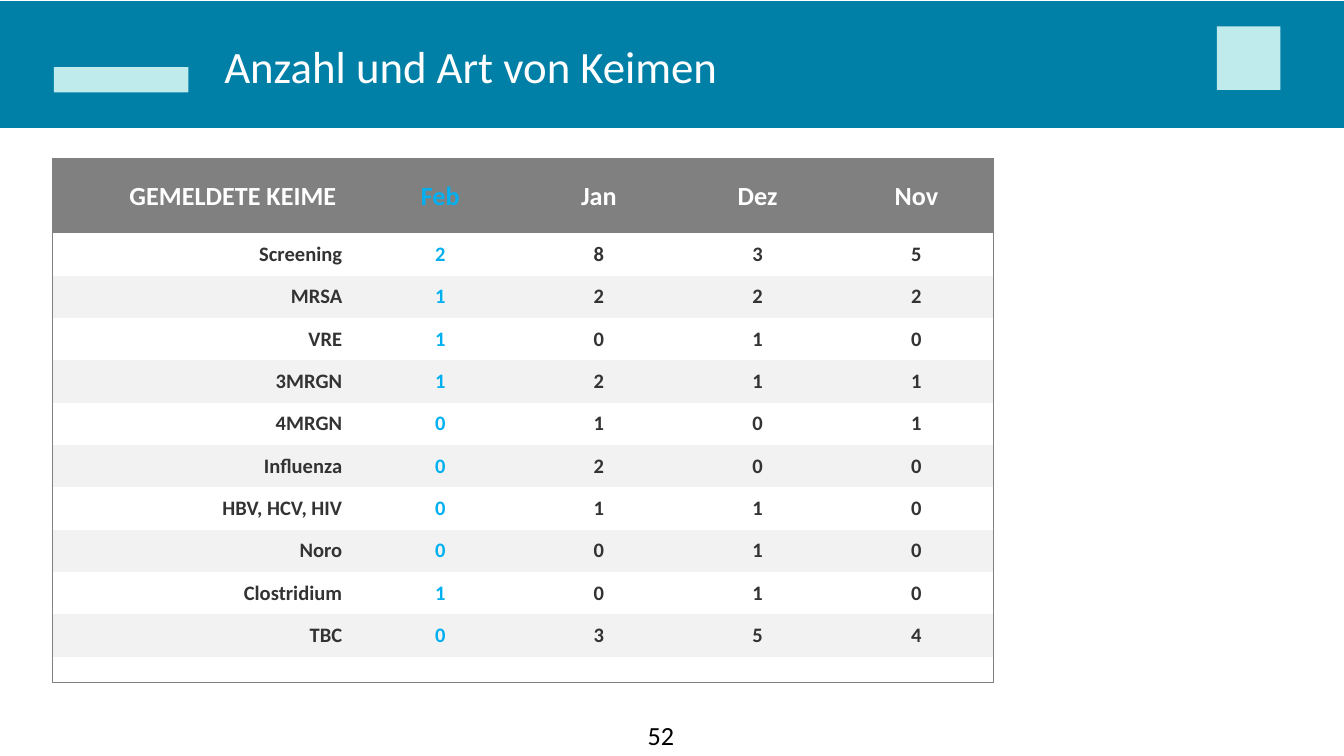
from lxml.etree import SubElement as Sub
from pptx import Presentation
from pptx.dml.color import RGBColor as Rgb
from pptx.enum.shapes import MSO_SHAPE as Form
from pptx.enum.text import MSO_ANCHOR as Anchor, MSO_AUTO_SIZE as Fit, PP_ALIGN as Align
from pptx.oxml.ns import qn
from pptx.util import Cm, Pt

# Content
HEAD = ["GEMELDETE KEIME", "Feb", "Jan", "Dez", "Nov"]
GERMS = [
    ("Screening", 2, 8, 3, 5),
    ("MRSA", 1, 2, 2, 2),
    ("VRE", 1, 0, 1, 0),
    ("3MRGN", 1, 2, 1, 1),
    ("4MRGN", 0, 1, 0, 1),
    ("Influenza", 0, 2, 0, 0),
    ("HBV, HCV, HIV", 0, 1, 1, 0),
    ("Noro", 0, 0, 1, 0),
    ("Clostridium", 1, 0, 1, 0),
    ("TBC", 0, 3, 5, 4),
]

# Theme
THEME = {
    "font": "Calibri", "band": "0080A7", "mint": "BFEBED", "white": "FFFFFF",
    "gray": "808080", "stripe": "F2F2F2", "ink": "333333", "now": "00B0F0",
    "black": "000000", "title": 24, "head": 14, "body": 11, "page": 14,
}

# Text boxes: text, place in cm, size, colour, frame values
FREE = {"word_wrap": False, "auto_size": Fit.SHAPE_TO_FIT_TEXT}
FLAT = {"word_wrap": True, "vertical_anchor": Anchor.MIDDLE, "margin_left": 0,
        "margin_right": 0, "margin_top": 0, "margin_bottom": 0}
TEXTS = [
    ("52", (11.99, 13.48, 1.42, 0.86), "page", "black", FREE),
    ("Anzahl und Art von Keimen", (4.24, 0.84, 18.42, 0.81), "title", "white", FLAT),
]

# Plain blocks: place in cm, colour
BLOCKS = [
    ((0, 0.02, 25.4, 2.4), "band"),
    ((1.02, 1.27, 2.54, 0.48), "mint"),
    ((23, 0.5, 1.2, 1.2), "mint"),
]

# Table geometry in cm
SPOT = (1, 3)
WIDTHS = [5.77] + [3] * 4
HEIGHTS = [1.41] + [0.8] * len(GERMS) + [0.49]


def tint(name):
    return Rgb.from_string(THEME[name])


def apply(item, vals):
    for key, val in vals.items():
        setattr(item, key, val)


def write(para, text, size, color, bold=False):
    run = para.add_run()
    run.text = text
    apply(run.font, {"name": THEME["font"], "size": Pt(THEME[size]), "bold": bold})
    run.font.color.rgb = tint(color)


def frame(cell, sides):
    props = cell._tc.get_or_add_tcPr()
    for i, side in enumerate("LRTB"):
        line = Sub(props, qn(f"a:ln{side}"), w=str(Pt(0.5)))
        if side in sides:
            Sub(Sub(line, qn("a:solidFill")), qn("a:srgbClr"), val=THEME["gray"])
        else:
            Sub(line, qn("a:noFill"))
        props.insert(i, line)


def fill_cell(cell, text, row, col):
    top, left = row == 0, col == 0
    right = (0.41 if top else 0.3) if left else 0
    apply(cell, {"vertical_anchor": Anchor.MIDDLE, "margin_left": Cm(0.3 if left else 0.1),
                 "margin_right": Cm(right), "margin_top": 0, "margin_bottom": 0})
    cell.fill.solid()
    shade = "gray" if top else "white" if row % 2 else "stripe"
    cell.fill.fore_color.rgb = tint(shade)
    ends = {"L": left, "R": col == len(WIDTHS) - 1, "T": top, "B": row == len(HEIGHTS) - 1}
    frame(cell, [side for side, edge in ends.items() if edge])
    para = cell.text_frame.paragraphs[0]
    para.alignment = Align.RIGHT if left else Align.CENTER
    if text:
        color = "now" if col == 1 else "white" if top else "ink"
        write(para, text, "head" if top else "body", color, True)
    else:
        Sub(para._p, qn("a:endParaRPr"), sz="800")


def main():
    deck = Presentation()
    apply(deck, {"slide_width": Cm(25.4), "slide_height": Cm(14.29)})
    shapes = deck.slides.add_slide(deck.slide_layouts[6]).shapes

    # Header band with its two plain blocks
    for place, color in BLOCKS:
        block = shapes.add_shape(Form.RECTANGLE, *map(Cm, place))
        block.shadow.inherit = False
        block.fill.solid()
        block.fill.fore_color.rgb = tint(color)
        block.line.fill.background()

    # Germ table
    rows = [HEAD, *GERMS, [""] * len(HEAD)]
    size = (sum(WIDTHS), sum(HEIGHTS))
    table = shapes.add_table(len(rows), len(HEAD), *map(Cm, SPOT + size)).table
    apply(table, {"first_row": False, "horz_banding": False})
    for col, width in zip(table.columns, WIDTHS):
        col.width = Cm(width)
    for r, (row, height) in enumerate(zip(rows, HEIGHTS)):
        table.rows[r].height = Cm(height)
        for c, text in enumerate(row):
            fill_cell(table.cell(r, c), str(text), r, c)

    # Title and page number
    for text, place, size, color, vals in TEXTS:
        box = shapes.add_textbox(*map(Cm, place)).text_frame
        apply(box, vals)
        write(box.paragraphs[0], text, size, color)

    deck.save("out.pptx")


if __name__ == "__main__":
    main()
